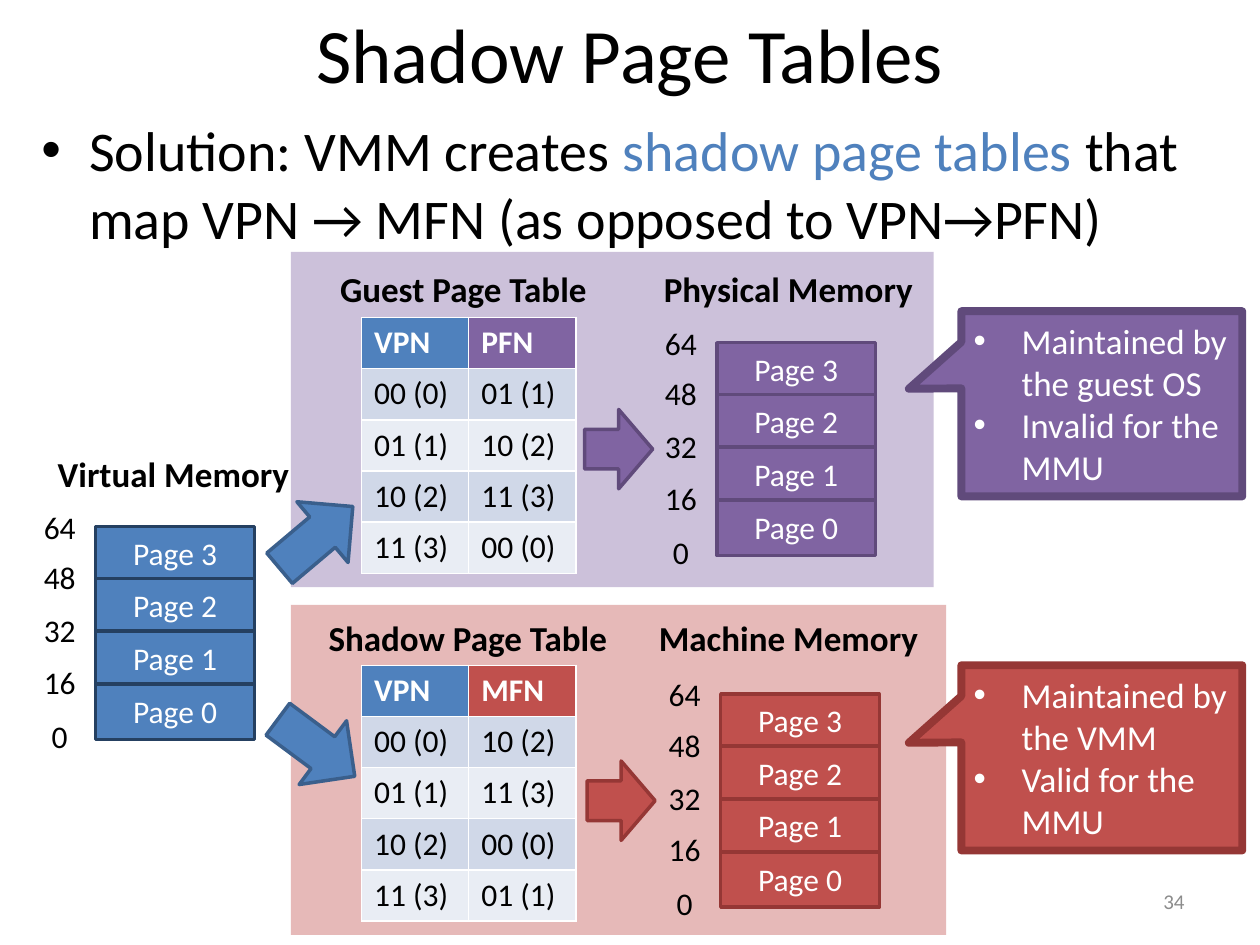
import pptx
import pptx.util
import pptx.dml.color
import pptx.enum.shapes
import pptx.enum.text
import lxml.etree

Inches = pptx.util.Inches
Pt = pptx.util.Pt
RGBColor = pptx.dml.color.RGBColor
Shape = pptx.enum.shapes.MSO_SHAPE
Align = pptx.enum.text.PP_ALIGN
Anchor = pptx.enum.text.MSO_ANCHOR

BLACK = RGBColor(0x00, 0x00, 0x00)
WHITE = RGBColor(0xFF, 0xFF, 0xFF)
GRAY = RGBColor(0x8C, 0x8C, 0x8C)
BLUE = RGBColor(0x4F, 0x81, 0xBD)
NAVY = RGBColor(0x25, 0x40, 0x61)
STEEL = RGBColor(0x3A, 0x5F, 0x8C)
PURPLE = RGBColor(0x80, 0x64, 0xA2)
PLUM = RGBColor(0x60, 0x4A, 0x7B)
LILAC = RGBColor(0xCC, 0xC1, 0xDA)
RED = RGBColor(0xC0, 0x50, 0x4D)
MAROON = RGBColor(0x95, 0x37, 0x35)
PINK = RGBColor(0xE6, 0xB9, 0xB8)
BANDS = [RGBColor(0xE9, 0xED, 0xF4), RGBColor(0xD0, 0xD8, 0xE8)]

deck = pptx.Presentation()
deck.slide_width = Inches(10)
deck.slide_height = Inches(7.5)
slide = deck.slides.add_slide(deck.slide_layouts[6])
shapes = slide.shapes


def write(frame, lines, size, color=BLACK, align=Align.LEFT, bold=False, wrap=True):
    frame.word_wrap = wrap
    for i, line in enumerate(lines):
        para = frame.paragraphs[0] if i == 0 else frame.add_paragraph()
        for text, tint in line if isinstance(line, list) else [(line, None)]:
            run = para.add_run()
            run.text = text
            if tint is not None:
                run.font.color.rgb = tint
        para.alignment = align
        para.font.name = "Calibri"
        para.font.size = Pt(size)
        para.font.bold = bold
        para.font.color.rgb = color
    return frame


def draw(kind, x, y, w, h, fill, edge=None, width=2):
    shape = shapes.add_shape(kind, Inches(x), Inches(y), Inches(w), Inches(h))
    shape.shadow.inherit = False
    shape.fill.solid()
    shape.fill.fore_color.rgb = fill
    if edge is None:
        shape.line.fill.background()
    else:
        shape.line.color.rgb = edge
        shape.line.width = Pt(width)
    return shape


draw(Shape.RECTANGLE, 2.31, 2, 5.1, 2.66, LILAC)
draw(Shape.RECTANGLE, 2.31, 4.8, 5.2, 2.62, PINK)

title = shapes.add_textbox(Inches(0.5), Inches(0), Inches(9), Inches(0.84))
write(title.text_frame, ["Shadow Page Tables"], 44, align=Align.CENTER)
title.text_frame.vertical_anchor = Anchor.MIDDLE

body = shapes.add_textbox(Inches(0.23), Inches(0.87), Inches(9.55), Inches(1.37))
line = [
    ("Solution: VMM creates ", BLACK),
    ("shadow page tables", BLUE),
    (" that map VPN → MFN (as opposed to VPN→PFN)", BLACK),
]
write(body.text_frame, [line], 32)

number = shapes.add_textbox(Inches(7.17), Inches(6.95), Inches(2.33), Inches(0.4))
write(number.text_frame, ["34"], 12, GRAY, Align.RIGHT)
number.text_frame.vertical_anchor = Anchor.MIDDLE

pages = [("Page 0", 1.24, 0.45), ("Page 1", 0.83, 0.42), ("Page 2", 0.41, 0.42), ("Page 3", 0, 0.41)]
marks = [("64", -0.2), ("48", 0.2), ("32", 0.62), ("16", 1.03), ("0", 1.46)]
for x, y, fill, edge in [
    (0.76, 4.18, BLUE, NAVY),
    (5.69, 2.72, PURPLE, PLUM),
    (5.72, 5.51, RED, MAROON),
]:
    for name, drop, tall in pages:
        page = draw(Shape.RECTANGLE, x, y + drop, 1.26, tall, fill, edge)
        write(page.text_frame, [name], 18, WHITE, Align.CENTER)
    for mark, drop in marks:
        wide = 0.2 + 0.13 * len(mark)
        left = x - 0.29 - wide / 2
        label = shapes.add_textbox(Inches(left), Inches(y + drop), Inches(wide), Inches(0.4))
        write(label.text_frame, [mark], 18, align=Align.RIGHT, wrap=False)

for text, x, y, wide in [
    ("Virtual Memory", 0.36, 3.54, 2.05),
    ("Physical Memory", 5.17, 2.07, 2.2),
    ("Machine Memory", 5.13, 4.84, 2.28),
    ("Guest Page Table", 2.6, 2.07, 2.18),
    ("Shadow Page Table", 2.51, 4.84, 2.43),
]:
    head = shapes.add_textbox(Inches(x), Inches(y), Inches(wide), Inches(0.44))
    write(head.text_frame, [text], 20, bold=True, wrap=False)

keys = ["00 (0)", "01 (1)", "10 (2)", "11 (3)"]
for y, head, fill, shift in [(2.52, "PFN", PURPLE, 1), (5.28, "MFN", RED, 2)]:
    rows = [("VPN", head)] + list(zip(keys, keys[shift:] + keys[:shift]))
    table = shapes.add_table(5, 2, Inches(2.87), Inches(y), Inches(1.7), Inches(2.03)).table
    for r, row in enumerate(rows):
        for c, text in enumerate(row):
            cell = table.cell(r, c)
            cell.fill.solid()
            cell.fill.fore_color.rgb = BANDS[r % 2] if r else (BLUE, fill)[c]
            write(cell.text_frame, [text], 18, BLACK if r else WHITE, bold=r == 0)

for x, y, wide, turn, fill, edge in [
    (2.13, 3.95, 0.76, 319.9, BLUE, STEEL),
    (4.64, 3.25, 0.54, 0, PURPLE, PLUM),
    (2.13, 5.62, 0.76, 36.6, BLUE, STEEL),
    (4.66, 6.04, 0.54, 0, RED, MAROON),
]:
    arrow = draw(Shape.RIGHT_ARROW, x, y, wide, 0.63, fill, edge)
    arrow.rotation = turn

lists = [body.text_frame]
for y, fill, edge, notes in [
    (2.47, PURPLE, PLUM, ["Maintained by the guest OS", "Invalid for the MMU"]),
    (5.28, RED, MAROON, ["Maintained by the VMM", "Valid for the MMU"]),
]:
    note = draw(Shape.RECTANGULAR_CALLOUT, 7.63, y, 2.23, 1.47, fill, edge, 4.5)
    note.adjustments[0] = -0.687
    note.adjustments[1] = -0.081
    lists.append(write(note.text_frame, notes, 20, WHITE))

for frame in lists:
    for para in frame.paragraphs:
        props = para._p.get_or_add_pPr()
        props.set("marL", str(Inches(0.38)))
        props.set("indent", str(-Inches(0.38)))
        font = pptx.oxml.ns.qn("a:buFont")
        mark = pptx.oxml.ns.qn("a:buChar")
        props.insert(0, lxml.etree.Element(font, typeface="Arial"))
        props.insert(1, lxml.etree.Element(mark, char="•"))

deck.save("out.pptx")
